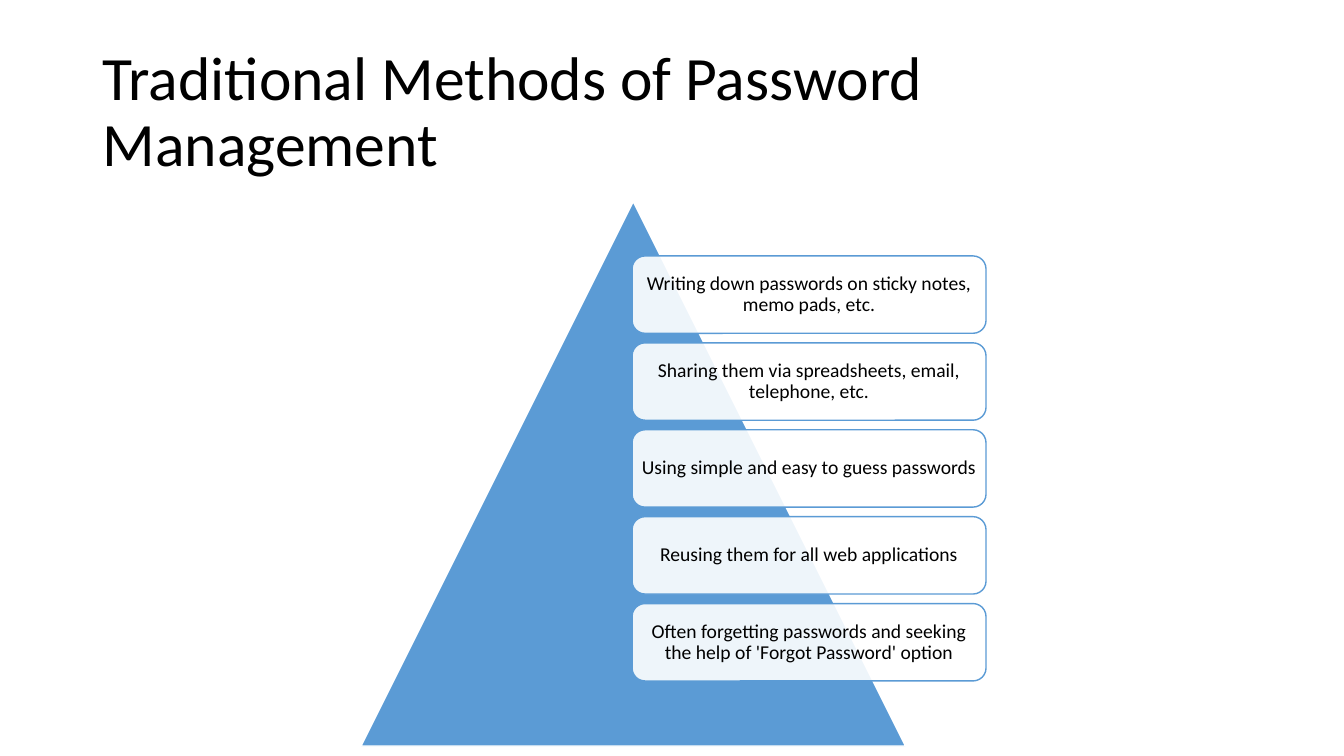
from lxml import etree
from pptx import Presentation
from pptx.dml.color import RGBColor
from pptx.enum.shapes import MSO_SHAPE
from pptx.enum.text import MSO_ANCHOR, MSO_AUTO_SIZE, PP_ALIGN
from pptx.oxml.ns import qn
from pptx.util import Cm, Pt

TRIANGLE = MSO_SHAPE.ISOSCELES_TRIANGLE
ROUNDED = MSO_SHAPE.ROUNDED_RECTANGLE
MIDDLE = MSO_ANCHOR.MIDDLE
NO_AUTOFIT = MSO_AUTO_SIZE.NONE
LEFT, CENTER = PP_ALIGN.LEFT, PP_ALIGN.CENTER

BLUE = RGBColor(0x5B, 0x9B, 0xD5)
WHITE = RGBColor(0xFF, 0xFF, 0xFF)
BLACK = RGBColor(0, 0, 0)

TITLE = "Traditional Methods of Password \nManagement"
METHODS = [
    "Writing down passwords on sticky notes, memo pads, etc.",
    "Sharing them via spreadsheets, email, telephone, etc.",
    "Using simple and easy to guess passwords",
    "Reusing them for all web applications",
    "Often forgetting passwords and seeking the help of 'Forgot Password' option",
]
BOX_LEFT, BOX_TOP, BOX_WIDTH, BOX_HEIGHT, BOX_PITCH = 15.93, 6.45, 8.92, 1.95, 2.19


def write_text(tf, text, size=14, color=BLACK, font="Calibri", align=CENTER):
    """Fill the first paragraph; a newline in the text becomes a line break."""
    tf.word_wrap = True
    tf.auto_size = NO_AUTOFIT
    tf.vertical_anchor = MIDDLE
    p = tf.paragraphs[0]
    p.alignment = align
    p.line_spacing = 0.9
    for i, line in enumerate(text.split("\n")):
        if i:
            p.add_line_break()
        r = p.add_run()
        r.text = line
        r.font.size = Pt(size)
        r.font.name = font
        r.font.color.rgb = color


class PyramidSlide:
    """Adds styled elements to one slide, with the diagram kept in a group."""

    def __init__(self, prs):
        self.slide = prs.slides.add_slide(prs.slide_layouts[5])
        self.diagram = self.slide.shapes.add_group_shape()

    def title(self, text, left, top, width, height):
        sp = self.slide.shapes.title
        sp.left, sp.top, sp.width, sp.height = Cm(left), Cm(top), Cm(width), Cm(height)
        write_text(sp.text_frame, text, size=44, align=LEFT)

    def shape(self, kind, left, top, width, height, fill, line):
        sp = self.diagram.shapes.add_shape(kind, Cm(left), Cm(top), Cm(width), Cm(height))
        sp.shadow.inherit = False
        sp.fill.solid()
        sp.fill.fore_color.rgb = fill
        sp.line.color.rgb = line
        sp.line.width = Pt(1)
        return sp

    def box(self, text, left, top, width, height):
        sp = self.shape(ROUNDED, left, top, width, height, WHITE, BLUE)
        color = sp.fill._xPr.find(qn("a:solidFill"))[0]
        etree.SubElement(color, qn("a:alpha"), val="90000")
        tf = sp.text_frame
        tf.margin_left = tf.margin_right = tf.margin_top = tf.margin_bottom = Cm(0.14)
        write_text(tf, text)


def main():
    prs = Presentation()
    prs.slide_width, prs.slide_height = Cm(33.87), Cm(19.05)
    s = PyramidSlide(prs)
    s.title(TITLE, 2.33, 1.02, 29.21, 3.68)
    s.shape(TRIANGLE, 9.1, 5.08, 13.72, 13.72, BLUE, WHITE)
    for i, method in enumerate(METHODS):
        s.box(method, BOX_LEFT, BOX_TOP + i * BOX_PITCH, BOX_WIDTH, BOX_HEIGHT)
    prs.save("out.pptx")


if __name__ == "__main__":
    main()
